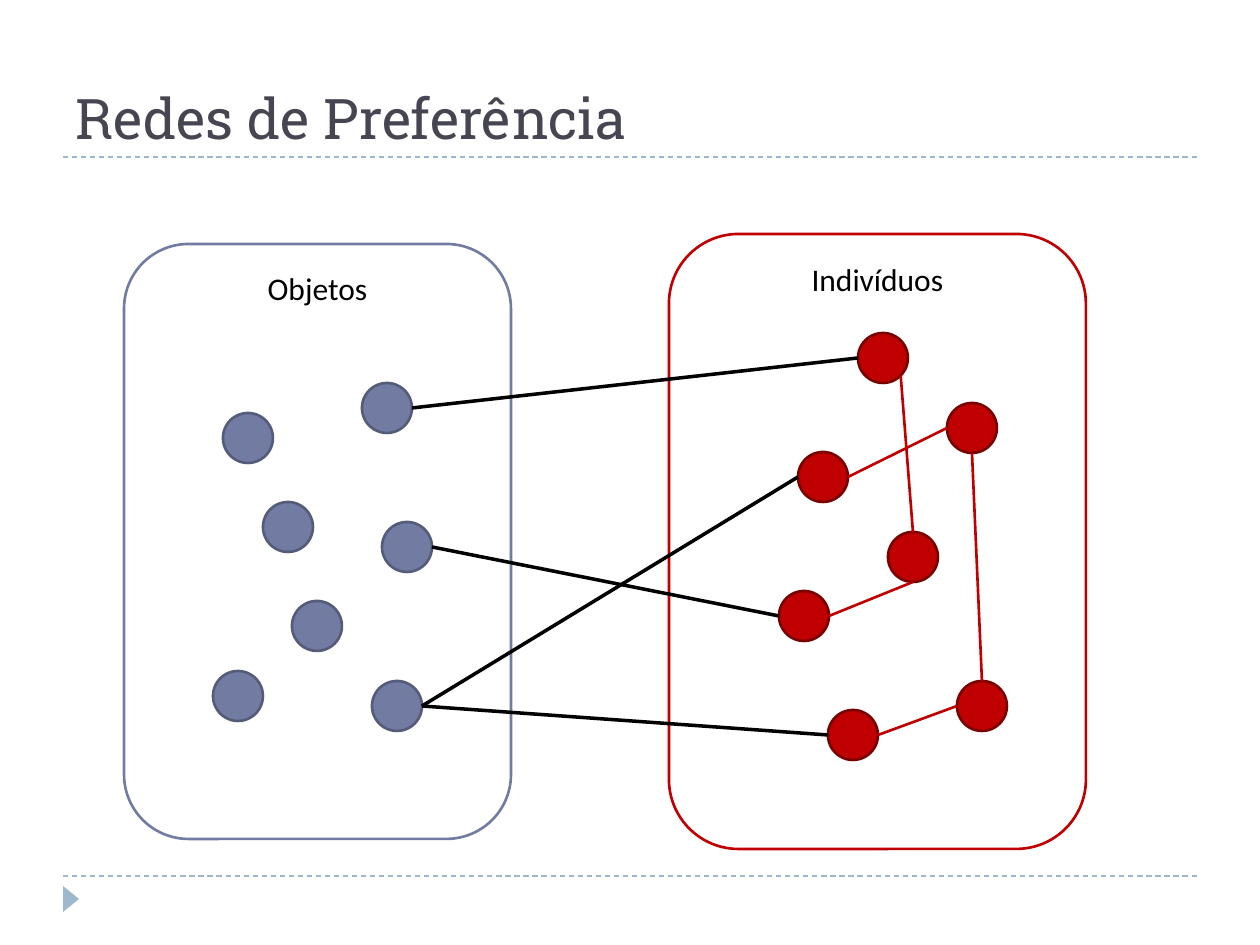
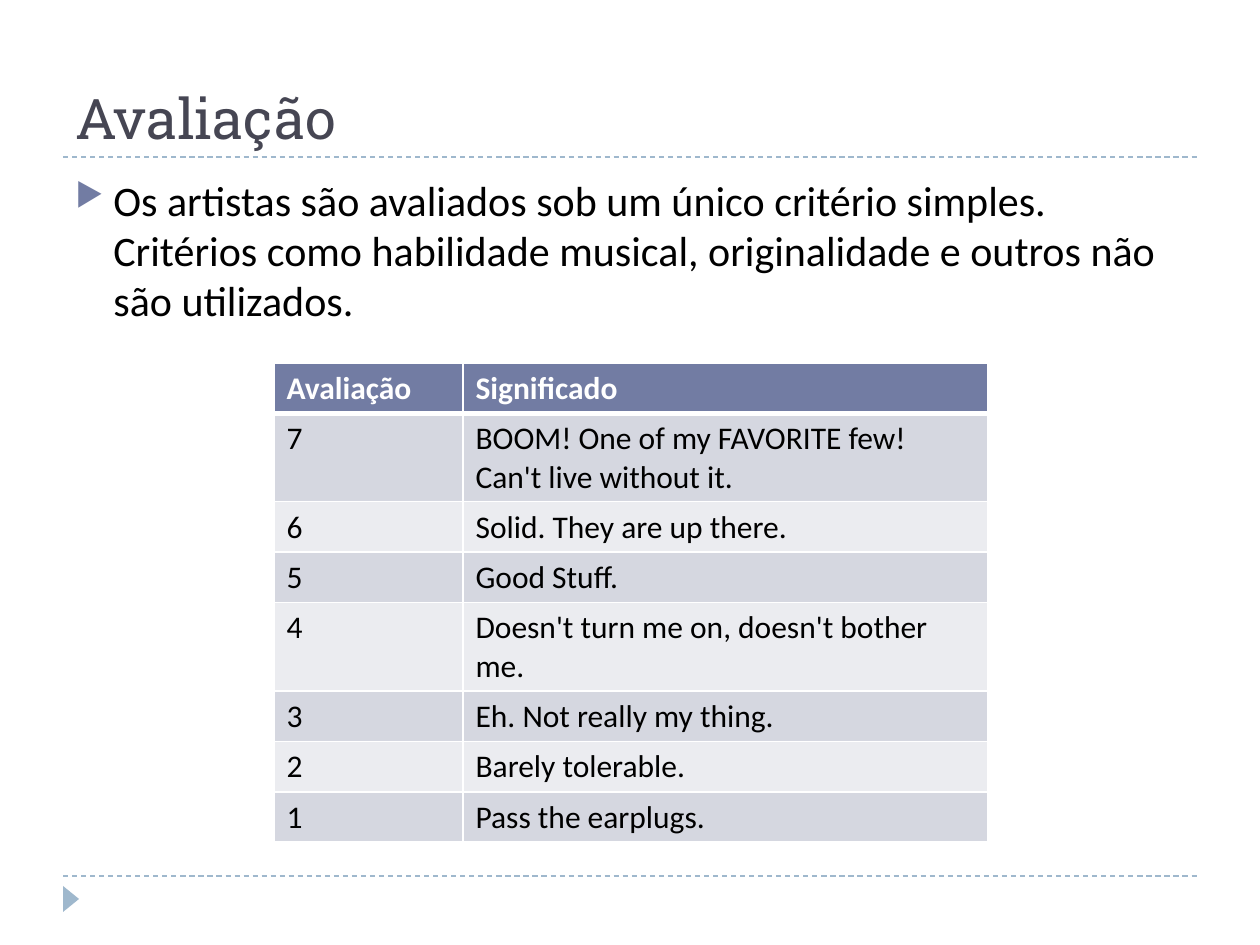
"""Build two slides on preference networks: a linked diagram and a rating scale table."""
from lxml.etree import SubElement
from pptx import Presentation
from pptx.dml.color import RGBColor
from pptx.enum.dml import MSO_LINE
from pptx.enum.shapes import MSO_CONNECTOR, MSO_SHAPE
from pptx.enum.text import MSO_ANCHOR, PP_ALIGN
from pptx.oxml.ns import qn
from pptx.util import Pt

PIXELS_PER_INCH = 126
SLIDE_SIZE = (1260, 945)
SLATE, RED, SKY, BLACK, WHITE = "727CA3", "C00000", "9FB8CD", "000000", "FFFFFF"

TITLE_FORMAT = {"name": "Roboto Slab", "size": Pt(32), "color": "464653"}
BODY_FORMAT = {"name": "Calibri", "size": Pt(24), "color": BLACK}
LABEL_FORMAT = {"name": "Calibri", "size": Pt(18), "color": BLACK}
HEADER_FORMAT = {"name": "Calibri", "size": Pt(18), "color": WHITE, "bold": True}

TITLE_BOX = (63, 21, 1134, 136)
RULE_SPAN = (63, 1197)
RULE_HEIGHTS = (157, 876)
FOOTER_TRIANGLE = (58, 891, 26, 16)

NETWORK_TITLE = "Redes de Preferência"
PANELS = [
    ("Indivíduos", (669, 234, 417, 615), RED),
    ("Objetos", (124, 244, 387, 595), SLATE),
]
DOT_SIZE = 50
OBJECTS = [(387, 408), (288, 527), (248, 438), (407, 547), (238, 696), (397, 706), (317, 626)]
PEOPLE = [(883, 358), (972, 428), (823, 477), (913, 557), (982, 706), (853, 735), (804, 616)]
DOT_GROUPS = [(OBJECTS, SLATE, "545C79"), (PEOPLE, RED, "7A0000")]
SIDES = {"left": (-1, 0), "right": (1, 0), "top": (0, -1), "bottom": (0, 1),
         "bottom right": (0.71, 0.71)}
PREFERENCES = [(6, 3), (2, 5), (5, 5), (0, 0)]
FRIENDSHIPS = [
    (4, "top", 1, "bottom"),
    (3, "top", 0, "bottom right"),
    (6, "right", 3, "bottom"),
    (4, "left", 5, "right"),
    (2, "right", 1, "left"),
]

RATING_TITLE = "Avaliação"
RATING_TEXT = ("Os artistas são avaliados sob um único critério simples. Critérios como "
               "habilidade musical, originalidade e outros não são utilizados.")
RATING_BOX = (63, 168, 1134, 680)
BULLET_INDENT = 38
RATINGS = [
    ("Avaliação", "Significado"),
    ("7", "BOOM! One of my FAVORITE few!\nCan't live without it."),
    ("6", "Solid. They are up there."),
    ("5", "Good Stuff."),
    ("4", "Doesn't turn me on, doesn't bother me."),
    ("3", "Eh. Not really my thing."),
    ("2", "Barely tolerable."),
    ("1", "Pass the earplugs."),
]
TABLE_CORNER = (274, 363)
COLUMN_WIDTHS = (189, 525)
ROW_HEIGHT = 50
BAND_FILLS = ("EBECF0", "D5D7E0")


def emu(pixels):
    return round(pixels * 914400 / PIXELS_PER_INCH)


def scaled(lengths):
    return [emu(length) for length in lengths]


def rgb(color):
    return RGBColor.from_string(color)


def format_text(text_frame, values):
    for paragraph in text_frame.paragraphs:
        for name, value in values.items():
            if name == "color":
                paragraph.font.color.rgb = rgb(value)
            else:
                setattr(paragraph.font, name, value)


def add_text(slide, box, text, values, anchor=MSO_ANCHOR.TOP):
    text_frame = slide.shapes.add_textbox(*scaled(box)).text_frame
    text_frame.word_wrap = True
    text_frame.vertical_anchor = anchor
    text_frame.text = text
    format_text(text_frame, values)
    return text_frame


def add_shape(shapes, kind, box, fill, outline=None):
    shape = shapes.add_shape(kind, *scaled(box))
    shape.shadow.inherit = False
    shape.fill.solid()
    shape.fill.fore_color.rgb = rgb(fill)
    if outline:
        shape.line.color.rgb = rgb(outline)
        shape.line.width = Pt(1.5)
    else:
        shape.line.fill.background()
    return shape


def add_line(slide, start, end, color, width, dash=None):
    connector = slide.shapes.add_connector(MSO_CONNECTOR.STRAIGHT, *scaled(start + end))
    connector.line.color.rgb = rgb(color)
    connector.line.width = Pt(width)
    if dash:
        connector.line.dash_style = dash
    SubElement(connector._element.spPr, qn("a:effectLst"))


def add_slide(presentation, title):
    slide = presentation.slides.add_slide(presentation.slide_layouts[6])
    left, right = RULE_SPAN
    for height in RULE_HEIGHTS:
        add_line(slide, (left, height), (right, height), SKY, 0.75, MSO_LINE.DASH)
    triangle = add_shape(slide.shapes, MSO_SHAPE.ISOSCELES_TRIANGLE, FOOTER_TRIANGLE, SKY)
    triangle.rotation = 90
    add_text(slide, TITLE_BOX, title, TITLE_FORMAT, MSO_ANCHOR.BOTTOM)
    return slide


def dot_edge(center, side):
    return tuple(middle + step * DOT_SIZE / 2 for middle, step in zip(center, SIDES[side]))


def add_network_slide(presentation):
    slide = add_slide(presentation, NETWORK_TITLE)
    for label, box, color in PANELS:
        panel = add_shape(slide.shapes, MSO_SHAPE.ROUNDED_RECTANGLE, box, WHITE, color)
        panel.text_frame.text = label
        panel.text_frame.vertical_anchor = MSO_ANCHOR.TOP
        panel.text_frame.paragraphs[0].alignment = PP_ALIGN.CENTER
        format_text(panel.text_frame, LABEL_FORMAT)
    for centers, fill, outline in DOT_GROUPS:
        group = slide.shapes.add_group_shape()
        for x, y in centers:
            box = (x - DOT_SIZE / 2, y - DOT_SIZE / 2, DOT_SIZE, DOT_SIZE)
            add_shape(group.shapes, MSO_SHAPE.FLOWCHART_CONNECTOR, box, fill, outline)
    for person, item in PREFERENCES:
        add_line(slide, dot_edge(PEOPLE[person], "left"), dot_edge(OBJECTS[item], "right"),
                 BLACK, 2)
    for first, first_side, second, second_side in FRIENDSHIPS:
        add_line(slide, dot_edge(PEOPLE[first], first_side),
                 dot_edge(PEOPLE[second], second_side), RED, 1.5)


def add_bullet(paragraph):
    properties = paragraph._p.get_or_add_pPr()
    properties.set("marL", str(emu(BULLET_INDENT)))
    properties.set("indent", str(-emu(BULLET_INDENT)))
    color = SubElement(properties, qn("a:buClr"))
    SubElement(color, qn("a:srgbClr"), val=SLATE)
    SubElement(properties, qn("a:buSzPct"), val="76000")
    SubElement(properties, qn("a:buChar"), char="▶")


def set_borders(cell, bottom_width):
    properties = cell._tc.get_or_add_tcPr()
    widths = {"a:lnL": 1, "a:lnR": 1, "a:lnT": 1, "a:lnB": bottom_width}
    for position, (tag, width) in enumerate(widths.items()):
        border = SubElement(properties, qn(tag), w=str(Pt(width)))
        fill = SubElement(border, qn("a:solidFill"))
        SubElement(fill, qn("a:srgbClr"), val=WHITE)
        properties.insert(position, border)


def add_rating_table(slide):
    size = (sum(COLUMN_WIDTHS), ROW_HEIGHT * len(RATINGS))
    table = slide.shapes.add_table(len(RATINGS), len(COLUMN_WIDTHS),
                                   *scaled(TABLE_CORNER + size)).table
    for column, width in zip(table.columns, COLUMN_WIDTHS):
        column.width = emu(width)
    for row_index, texts in enumerate(RATINGS):
        is_header = row_index == 0
        for column_index, text in enumerate(texts):
            cell = table.cell(row_index, column_index)
            cell.text = text
            cell.fill.solid()
            cell.fill.fore_color.rgb = rgb(SLATE if is_header else BAND_FILLS[row_index % 2])
            format_text(cell.text_frame, HEADER_FORMAT if is_header else LABEL_FORMAT)
            set_borders(cell, 3 if is_header else 1)


def add_rating_slide(presentation):
    slide = add_slide(presentation, RATING_TITLE)
    text_frame = add_text(slide, RATING_BOX, RATING_TEXT, {})
    add_bullet(text_frame.paragraphs[0])
    format_text(text_frame, BODY_FORMAT)
    add_rating_table(slide)


def main():
    presentation = Presentation()
    presentation.slide_width, presentation.slide_height = scaled(SLIDE_SIZE)
    add_network_slide(presentation)
    add_rating_slide(presentation)
    presentation.save("out.pptx")


if __name__ == "__main__":
    main()
